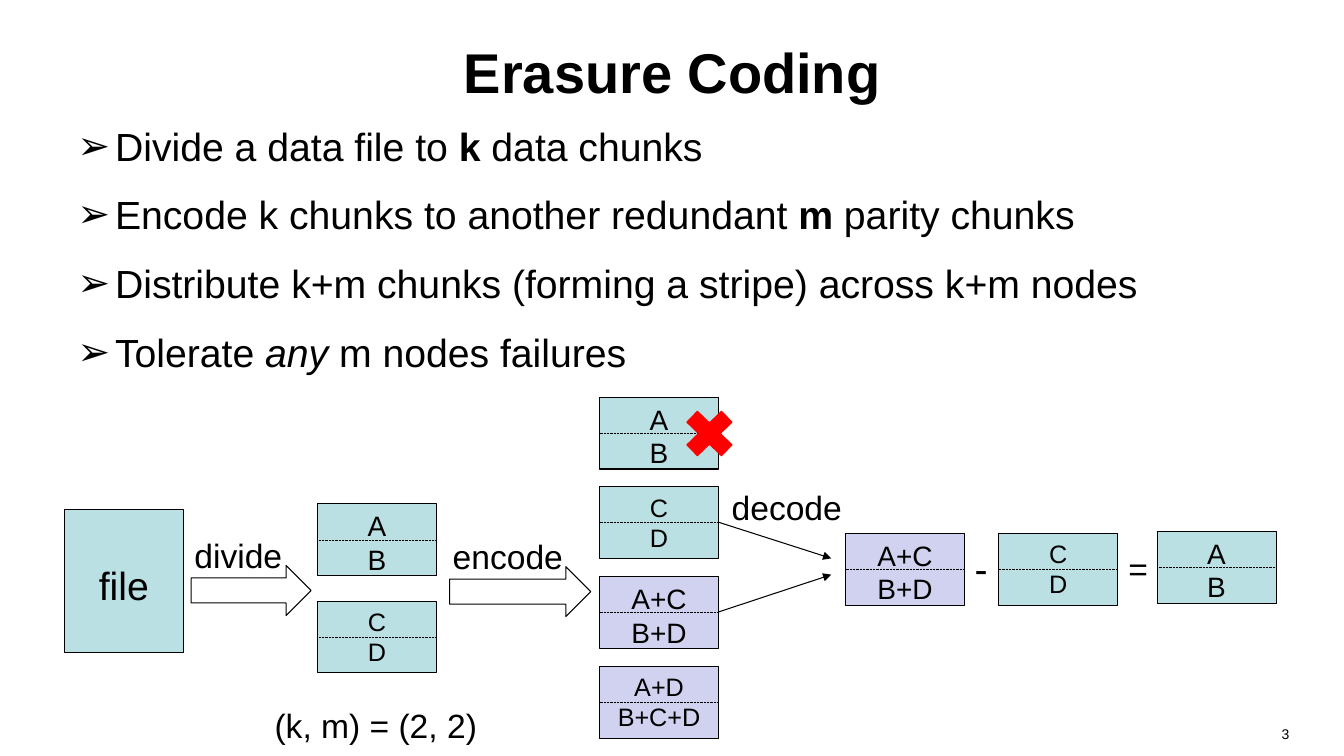
from lxml.etree import SubElement
from pptx import Presentation
from pptx.dml.color import RGBColor
from pptx.enum.dml import MSO_LINE_DASH_STYLE as DASH
from pptx.enum.shapes import MSO_CONNECTOR as CONN, MSO_SHAPE as SHAPE
from pptx.enum.text import MSO_ANCHOR as ANCHOR, MSO_AUTO_SIZE as AUTO, PP_ALIGN as ALIGN
from pptx.oxml.ns import qn
from pptx.util import Cm, Pt

BLACK, RED, DATA, PARITY = "000000", "FF0000", "BBE0E3", "D1D1F0"
CHUNK_W, CHUNK_H = 3.0, 1.81
# (lines, font size, fill)
AB = (("A", "B"), 20, DATA)
CD = (("C", "D"), 18, DATA)
AC_BD = (("A+C", "B+D"), 20, PARITY)
AD_BCD = (("A+D", "B+C+D"), 18, PARITY)
BULLETS = [
    [("Divide a data file to ", {}), ("k ", {"bold": True}), ("data chunks", {})],
    [("Encode k chunks to another redundant ", {}), ("m ", {"bold": True}),
     ("parity chunks", {})],
    [("Distribute k+m chunks (forming a stripe) across k+m nodes", {})],
    [("Tolerate ", {}), ("any ", {"italic": True}), ("m nodes failures", {})],
]


def rgb(value):
    return RGBColor.from_string(value)


def set_all(target, values):
    for name, value in values.items():
        setattr(target, name, value)


def add_run(p, text, size, **fmt):
    r = p.add_run()
    r.text = text
    set_all(r.font, {"name": "Arial", "size": Pt(size), **fmt})
    r.font.color.rgb = rgb(BLACK)


def text_box(s, x, y, w, h, **frame):
    tf = s.shapes.add_textbox(Cm(x), Cm(y), Cm(w), Cm(h)).text_frame
    set_all(tf, {"word_wrap": True, **frame})
    return tf


def label(s, text, x, y, w, size=24):
    tf = text_box(s, x, y, w, 1.27, word_wrap=False, auto_size=AUTO.SHAPE_TO_FIT_TEXT)
    add_run(tf.paragraphs[0], text, size)


def shape(s, kind, x, y, w, h, fill=None, line=BLACK):
    sp = s.shapes.add_shape(kind, Cm(x), Cm(y), Cm(w), Cm(h))
    sp.shadow.inherit = False
    if fill:
        sp.fill.solid()
        sp.fill.fore_color.rgb = rgb(fill)
    else:
        sp.fill.background()
    sp.line.color.rgb = rgb(line)
    sp.line.width = Pt(0.75)
    return sp


def labelled_box(s, lines, size, fill, x, y, w, h, spacing=None):
    """Rectangle with one centred paragraph per line of text."""
    tf = shape(s, SHAPE.RECTANGLE, x, y, w, h, fill).text_frame
    set_all(tf, {"vertical_anchor": ANCHOR.TOP, "word_wrap": True})
    for i, text in enumerate(lines):
        p = tf.add_paragraph() if i else tf.paragraphs[0]
        set_all(p, {"alignment": ALIGN.CENTER, "line_spacing": spacing})
        add_run(p, text, size)


def line(s, x1, y1, x2, y2, width, dash=None, arrow=False):
    c = s.shapes.add_connector(CONN.STRAIGHT, Cm(x1), Cm(y1), Cm(x2), Cm(y2))
    set_all(c.line, {"width": Pt(width), "dash_style": dash})
    c.line.color.rgb = rgb(BLACK)
    if arrow:
        SubElement(c.line._get_or_add_ln(), qn("a:tailEnd"), type="triangle")
    SubElement(c._element.spPr, qn("a:effectLst"))


def chunk(s, content, x, y):
    """Box of two symbols with a dotted line between them."""
    labelled_box(s, *content, x, y, CHUNK_W, CHUNK_H)
    middle = y + CHUNK_H / 2
    line(s, x, middle, x + CHUNK_W, middle, 0.5, dash=DASH.ROUND_DOT)


def chunk_column(s, contents, x, y, pitch):
    for i, content in enumerate(contents):
        chunk(s, content, x, y + i * pitch)


def step_arrow(s, text, x, y, w):
    """Block arrow with its step name above."""
    shape(s, SHAPE.RIGHT_ARROW, x, y, w, 1.26)
    label(s, text, x - 0.17, y - 0.9, w - 0.25)


def title(s, x, y, w, h):
    tf = text_box(s, x, y, w, h, vertical_anchor=ANCHOR.MIDDLE)
    p = tf.paragraphs[0]
    p.alignment = ALIGN.CENTER
    add_run(p, "Erasure Coding", 40, bold=True)


def bullets(s, x, y, w, h):
    tf = text_box(s, x, y, w, h)
    for i, parts in enumerate(BULLETS):
        p = tf.add_paragraph() if i else tf.paragraphs[0]
        p.space_after = Pt(15.5)
        pPr = p._p.get_or_add_pPr()
        pPr.set("marL", str(Cm(0.95)))
        pPr.set("indent", str(Cm(-0.95)))
        SubElement(pPr, qn("a:buFont"), typeface="Arial")
        SubElement(pPr, qn("a:buChar"), char="➢")
        for text, fmt in parts:
            add_run(p, text, 28, **fmt)


def divide_region(s, x, y):
    labelled_box(s, ["file"], 28, DATA, x, y + 0.13, 3.0, 3.61, spacing=2)
    step_arrow(s, "divide", x + 3.2, y + 1.55, 3.02)
    chunk_column(s, [AB, CD], x + 6.38, y, 2.45)
    label(s, "(k, m) = (2, 2)", x + 5.05, y + 4.95, 5.66)


def encode_region(s, x, y):
    step_arrow(s, "encode", x, y + 4.27, 3.56)
    chunk_column(s, [AB, CD, AC_BD, AD_BCD], x + 3.78, y, 2.26)
    shape(s, SHAPE.MATH_MULTIPLY, x + 5.71, y + 0.1, 1.68, 1.63, RED, RED)


def decode_region(s, x, y):
    for start, end in ((1.02, 1.93), (3.28, 2.34)):
        line(s, x, y + start, x + 2.84, y + end, 0.75, arrow=True)
    label(s, "decode", x + 0.08, y, 3.33)
    for content, dx, dy in ((AC_BD, 3.2, 1.3), (CD, 7.06, 1.3), (AB, 11.05, 1.25)):
        chunk(s, content, x + dx, y + dy)
    label(s, "-", x + 6.2, y + 1.45, 0.84, 28)
    label(s, "=", x + 10.08, y + 1.55, 1.02)


def slide_number(s, x, y, w, h):
    p = text_box(s, x, y, w, h).paragraphs[0]
    p.alignment = ALIGN.RIGHT
    add_run(p, "3", 10)


def main():
    prs = Presentation()
    set_all(prs, {"slide_width": Cm(33.87), "slide_height": Cm(19.05)})
    s = prs.slides.add_slide(prs.slide_layouts[6])
    title(s, 1.7, 0.2, 30.48, 3.18)
    bullets(s, 1.7, 2.95, 30.48, 16.1)
    slide_number(s, 24.84, 18.16, 7.9, 0.89)
    divide_region(s, 1.62, 12.7)
    encode_region(s, 11.33, 10.01)
    decode_region(s, 18.11, 12.14)
    prs.save("out.pptx")


if __name__ == "__main__":
    main()
